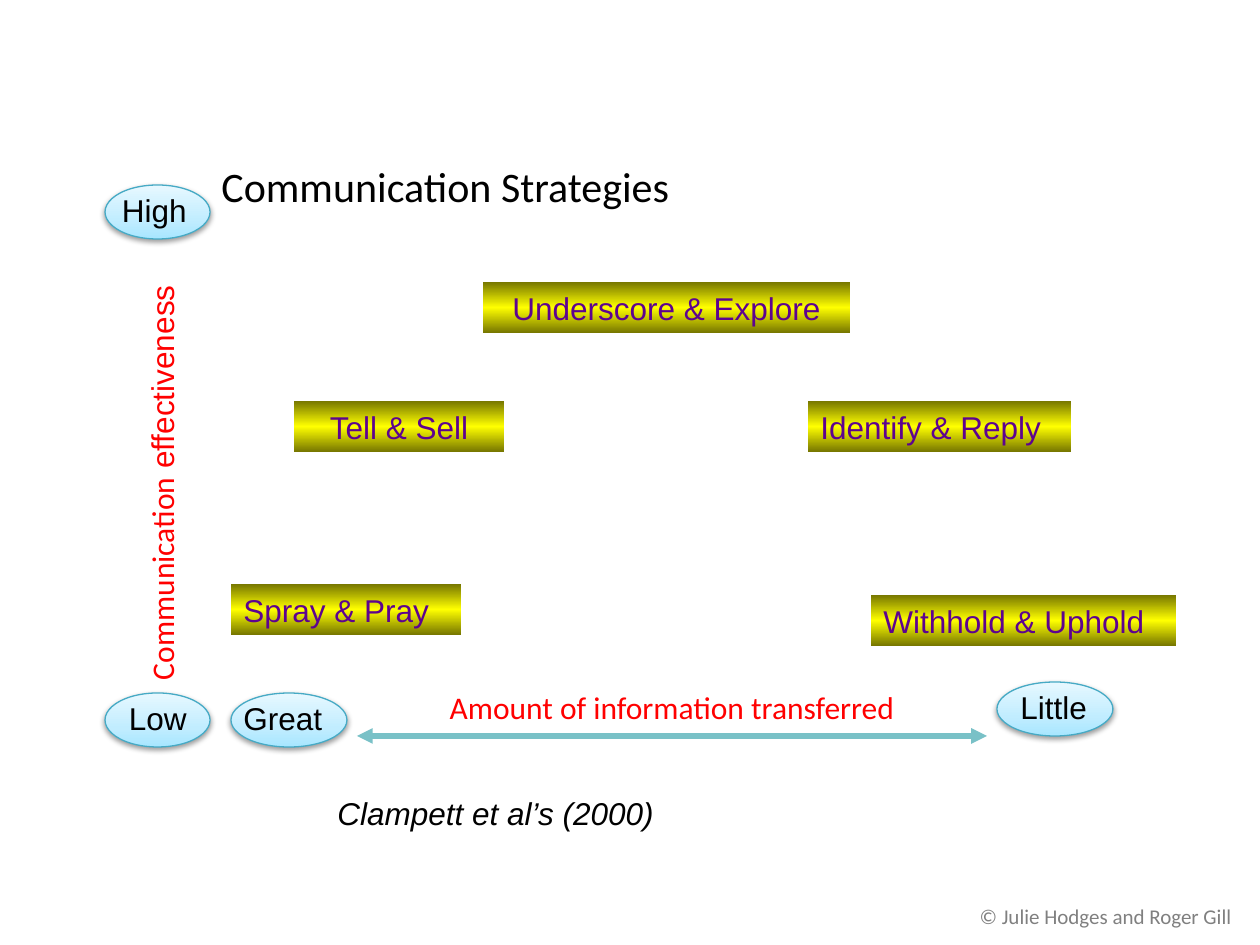
import pptx
import pptx.util
import pptx.oxml
import pptx.oxml.ns
import pptx.dml.color
import pptx.enum.shapes
import pptx.enum.text

SCALE = 914400 / 126  # EMU in one px
HUES = {
    "black": "000000", "red": "FF0000", "plum": "5D038F", "grey": "808080",
    "olive": "767600", "yellow": "FFFF00", "teal": "79C1C7", "rim": "46AAC5",
    "sky": "A7E6FF", "pale": "C1EDFF", "ice": "E7F8FF",
}
ALIGN = pptx.enum.text.PP_ALIGN
LEFT, MID, RIGHT = ALIGN.LEFT, ALIGN.CENTER, ALIGN.RIGHT
KINDS = pptx.enum.shapes.MSO_SHAPE
ANCHOR = pptx.enum.text.MSO_ANCHOR
NS = pptx.oxml.ns.nsdecls("a")
tag = pptx.oxml.ns.qn


def px(*sizes):
    return [pptx.util.Emu(round(size * SCALE)) for size in sizes]


def hue(name):
    return pptx.dml.color.RGBColor.from_string(HUES[name])


class Board:
    def __init__(self, slide):
        self.slide = slide

    def letter(self, shape, text, color, font="Arial", size=18, align=LEFT):
        frame = shape.text_frame
        frame.word_wrap = True
        frame.text = text
        line = frame.paragraphs[0]
        line.alignment = align
        run = line.runs[0]
        self.style(run, color, font, size)
        return run

    def style(self, run, color, font="Arial", size=18):
        run.font.name = font
        run.font.size = pptx.util.Pt(size)
        run.font.color.rgb = hue(color)

    def label(self, box, text, color="black", **look):
        shape = self.slide.shapes.add_textbox(*px(*box))
        return shape, self.letter(shape, text, color, **look)

    def shade(self, shape, stops, angle):
        shape.fill.background()
        marks = "".join(
            f'<a:gs pos="{pos * 1000}"><a:srgbClr val="{HUES[name]}"/></a:gs>'
            for pos, name in stops)
        blend = pptx.oxml.parse_xml(
            f'<a:gradFill {NS} rotWithShape="1"><a:gsLst>{marks}</a:gsLst>'
            f'<a:lin ang="{angle * 60000}" scaled="0"/></a:gradFill>')
        props = shape.element.spPr
        props.replace(props.find(tag("a:noFill")), blend)

    def plate(self, box, text, align):
        shape = self.slide.shapes.add_shape(KINDS.RECTANGLE, *px(*box))
        shape.shadow.inherit = False
        shape.line.fill.background()
        self.shade(shape, [(0, "olive"), (50, "yellow"), (100, "olive")], 90)
        self.letter(shape, text, "plum", align=align)

    def pill(self, box):
        shape = self.slide.shapes.add_shape(KINDS.OVAL, *px(*box))
        shape.line.color.rgb = hue("rim")
        shape.line.width = pptx.util.Pt(0.75)
        self.shade(shape, [(0, "sky"), (35, "pale"), (100, "ice")], 270)
        shape.shadow.inherit = False
        shape.element.spPr.find(tag("a:effectLst")).append(pptx.oxml.parse_xml(
            f'<a:outerShdw {NS} blurRad="40000" dist="20000" dir="5400000" '
            f'rotWithShape="0"><a:srgbClr val="{HUES["black"]}">'
            '<a:alpha val="38000"/></a:srgbClr></a:outerShdw>'))

    def arrow(self, start, end):
        line = self.slide.shapes.add_connector(
            pptx.enum.shapes.MSO_CONNECTOR.STRAIGHT, *px(*start, *end))
        line.line.color.rgb = hue("teal")
        line.line.width = pptx.util.Pt(3)
        props = line.element.spPr
        for part in ("headEnd", "tailEnd"):
            props.find(tag("a:ln")).append(pptx.oxml.parse_xml(
                f'<a:{part} {NS} type="triangle"/>'))
        props.append(pptx.oxml.parse_xml(f'<a:effectLst {NS}/>'))


def main():
    deck = pptx.Presentation()
    deck.slide_width, deck.slide_height = px(1260, 945)
    board = Board(deck.slides.add_slide(deck.slide_layouts[6]))

    # Title
    title, _ = board.label((209, 111, 1051, 149), "Communication Strategies",
                           font="Calibri", size=24)
    title.text_frame.vertical_anchor = ANCHOR.MIDDLE

    # Strategies
    for x, y, wide, text, align in (
            (483, 282, 367, "Underscore & Explore", MID),
            (808, 401, 263, "Identify & Reply", LEFT),
            (871, 595, 305, "Withhold & Uphold", LEFT),
            (294, 401, 210, "Tell & Sell", MID),
            (231, 584, 230, "Spray & Pray", LEFT)):
        board.plate((x, y, wide, 51), text, align)

    # Ends of both axes: pill, then its word with a small shift
    for x, y, wide, text, shift, align in (
            (105, 185, 105, "High", -11, RIGHT),
            (105, 693, 105, "Low", -11, RIGHT),
            (231, 693, 116, "Great", 0, LEFT),
            (997, 682, 116, "Little", 11, LEFT)):
        board.pill((x, y, wide, 54))
        board.label((x + shift, y, wide, 48), text, align=align)

    # Axis names and arrow
    board.arrow((357, 736), (987, 736))
    board.label((420, 682, 504, 50), "Amount of information transferred",
                "red", font="Calibri", align=MID)
    axis, _ = board.label((-76, 430, 475, 50), "Communication", "red",
                          font="Calibri")
    axis.rotation = 270
    rest = axis.text_frame.paragraphs[0].add_run()
    rest.text = " effectiveness"
    board.style(rest, "red")

    # Source and footer
    _, cite = board.label((325, 788, 800, 50), "Clampett et al’s (2000)")
    cite.font.italic = True
    board.label((834, 897, 410, 38), "© Julie Hodges and Roger Gill", "grey",
                font="Calibri", size=12, align=RIGHT)

    deck.save("out.pptx")


if __name__ == "__main__":
    main()
